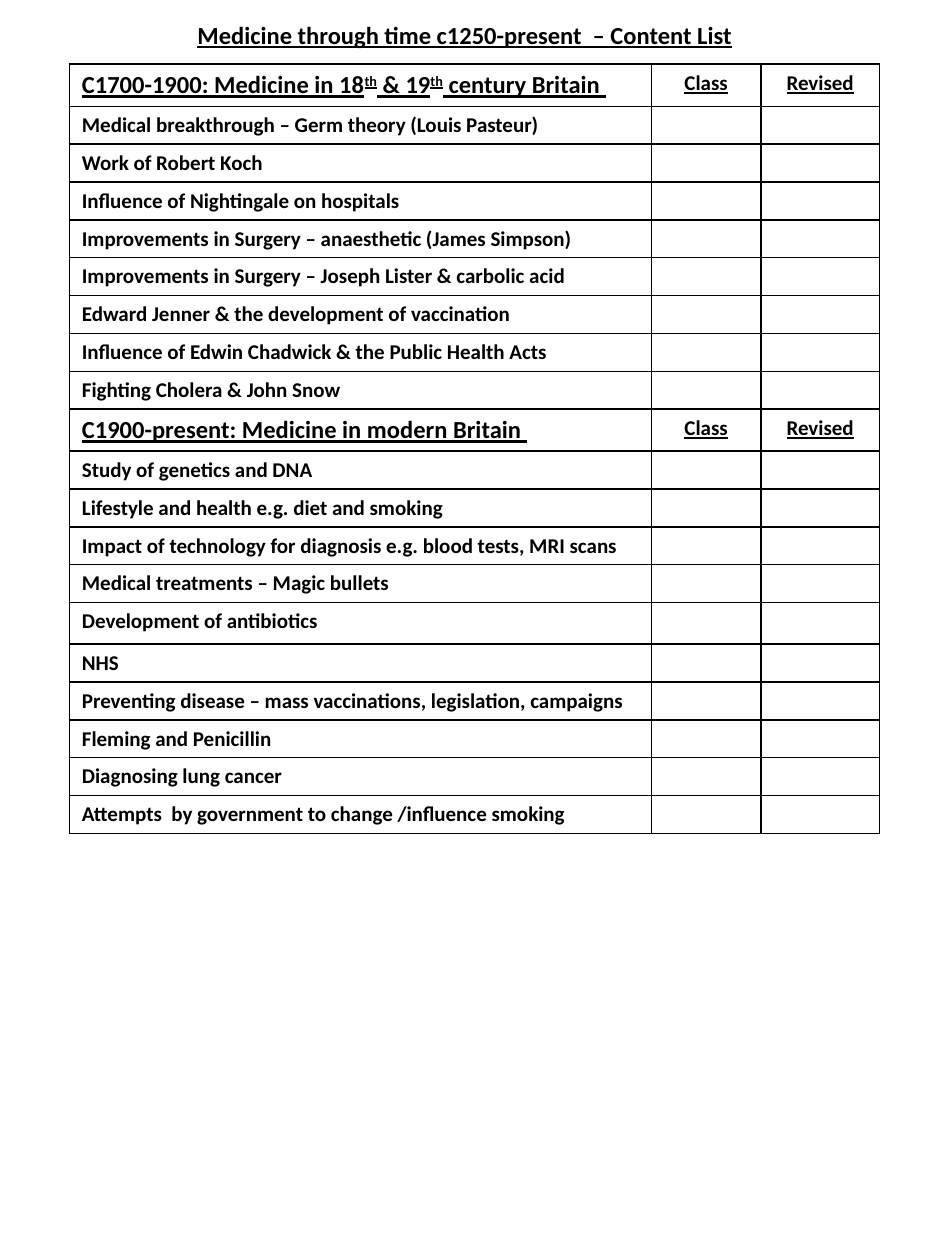
from pptx import Presentation
from pptx import util as u
from pptx.dml.color import RGBColor
from pptx.enum import text
from pptx.oxml import parse_xml
from pptx.oxml.ns import nsdecls

BLACK = RGBColor(0x00, 0x00, 0x00)
WHITE = RGBColor(0xFF, 0xFF, 0xFF)
FONT = "Calibri"
COLUMNS = [4.62, 0.87, 0.94]
HEADER_HEIGHT, TOPIC_HEIGHT = 0.33, 0.3
TALL_ROWS = {"Development of antibiotics": 0.33}

SECTIONS = [
    (["C1700-1900: Medicine in 18", "th", " & 19", "th", " century Britain "], [
        "Medical breakthrough – Germ theory (Louis Pasteur)",
        "Work of Robert Koch",
        "Influence of Nightingale on hospitals",
        "Improvements in Surgery – anaesthetic (James Simpson)",
        "Improvements in Surgery – Joseph Lister & carbolic acid",
        "Edward Jenner & the development of vaccination",
        "Influence of Edwin Chadwick & the Public Health Acts",
        "Fighting Cholera & John Snow",
    ]),
    (["C1900-present: Medicine in modern Britain "], [
        "Study of genetics and DNA",
        "Lifestyle and health e.g. diet and smoking",
        "Impact of technology for diagnosis e.g. blood tests, MRI scans",
        "Medical treatments – Magic bullets",
        "Development of antibiotics",
        "NHS",
        "Preventing disease – mass vaccinations, legislation, campaigns",
        "Fleming and Penicillin",
        "Diagnosing lung cancer",
        "Attempts  by government to change /influence smoking",
    ]),
]


def style(p, size, underline=False, align=text.PP_ALIGN.LEFT):
    p.alignment = align
    p.font.name = FONT
    p.font.size = u.Pt(size)
    p.font.bold = True
    p.font.underline = underline
    p.font.color.rgb = BLACK


def add_title(s, wording):
    sp = s.shapes.title
    sp.left, sp.top, sp.width, sp.height = map(u.Inches, (1.45, 0.11, 4.48, 0.34))
    tf = sp.text_frame
    tf.text = wording
    tf.word_wrap = False
    tf.auto_size = text.MSO_AUTO_SIZE.SHAPE_TO_FIT_TEXT
    tf.vertical_anchor = text.MSO_ANCHOR.TOP
    style(tf.paragraphs[0], 14, True, text.PP_ALIGN.CENTER)


def format_cell(cell):
    tcPr = cell._tc.get_or_add_tcPr()
    for side in ("lnL", "lnR", "lnT", "lnB"):
        tcPr.append(parse_xml(
            f'<a:{side} {nsdecls("a")} w="{u.Pt(1)}"><a:solidFill>'
            f'<a:srgbClr val="{BLACK}"/></a:solidFill></a:{side}>'))
    cell.fill.solid()
    cell.fill.fore_color.rgb = WHITE


def fill_header(row, heading):
    row.height = u.Inches(HEADER_HEIGHT)
    p = row.cells[0].text_frame.paragraphs[0]
    style(p, 14, True)
    for part in heading:
        r = p.add_run()
        r.text = part
        if part == "th":
            r.font._element.set("baseline", "30000")
    for cell, label in zip(list(row.cells)[1:], ("Class", "Revised")):
        cell.text = label
        style(cell.text_frame.paragraphs[0], 12, True, text.PP_ALIGN.CENTER)


def fill_topic(row, topic):
    row.height = u.Inches(TALL_ROWS.get(topic, TOPIC_HEIGHT))
    row.cells[0].text = topic
    for cell in row.cells:
        style(cell.text_frame.paragraphs[0], 12)


def add_checklist(s, sections):
    count = sum(1 + len(topics) for _, topics in sections)
    table = s.shapes.add_table(
        count, len(COLUMNS), u.Inches(0.55), u.Inches(0.51),
        u.Inches(sum(COLUMNS)), u.Inches(count * TOPIC_HEIGHT)).table
    table.first_row = table.horz_banding = False
    for column, width in zip(table.columns, COLUMNS):
        column.width = u.Inches(width)
    for cell in table.iter_cells():
        format_cell(cell)
    rows = iter(table.rows)
    for heading, topics in sections:
        fill_header(next(rows), heading)
        for topic in topics:
            fill_topic(next(rows), topic)


def main():
    prs = Presentation()
    prs.slide_width, prs.slide_height = u.Inches(7.5), u.Inches(10)
    s = prs.slides.add_slide(prs.slide_layouts[5])
    add_title(s, "Medicine through time c1250-present  – Content List")
    add_checklist(s, SECTIONS)
    prs.save("out.pptx")


if __name__ == "__main__":
    main()
